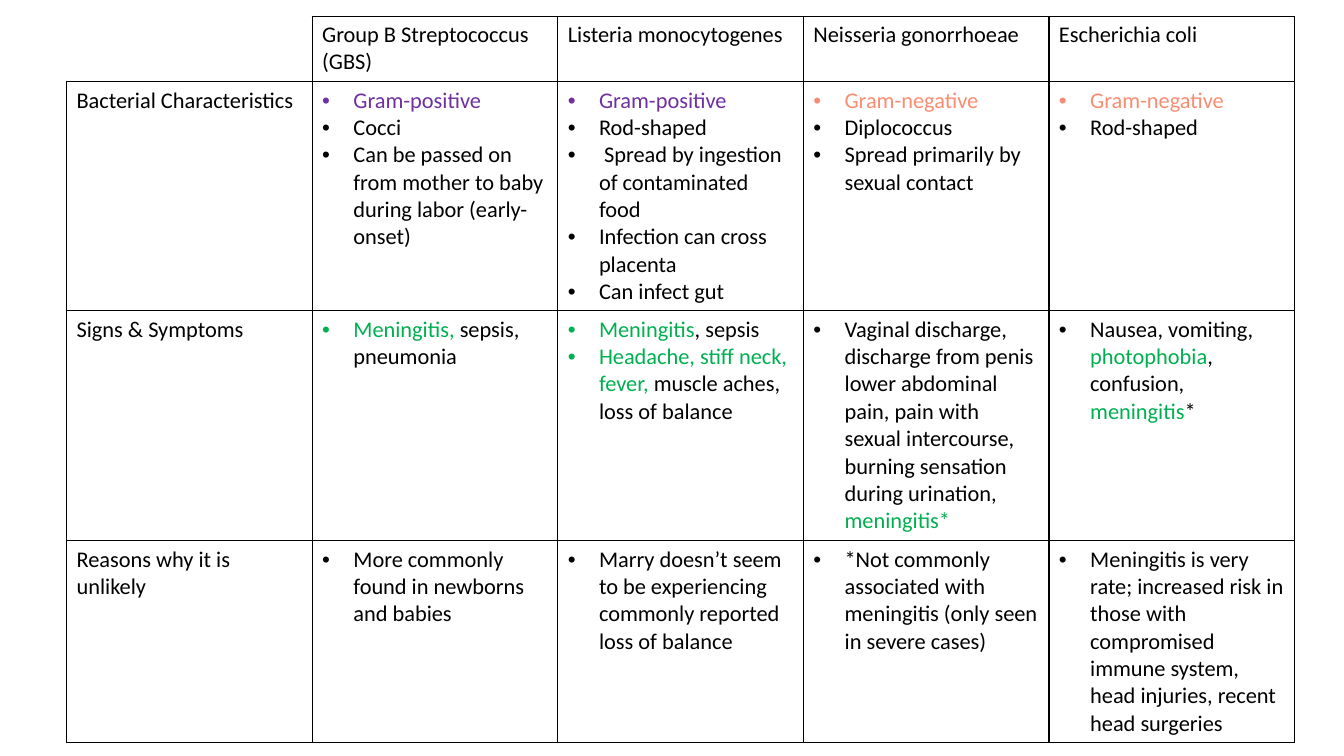
from lxml.etree import SubElement
from pptx import Presentation
from pptx.dml.color import RGBColor
from pptx.oxml.ns import qn
from pptx.util import Inches, Pt

BLACK = RGBColor(0x00, 0x00, 0x00)
PURPLE = RGBColor(0x70, 0x30, 0xA0)
CORAL = RGBColor(0xF9, 0x8D, 0x73)
GREEN = RGBColor(0x00, 0xB0, 0x50)

BACTERIA = ["Group B Streptococcus (GBS)", "Listeria monocytogenes",
            "Neisseria gonorrhoeae", "Escherichia coli"]
POSITIVE = [("Gram-positive", PURPLE)]
NEGATIVE = [("Gram-negative", CORAL)]

TOPICS = [
    ("Bacterial Characteristics", [
        [POSITIVE, "Cocci",
         "Can be passed on from mother to baby during labor (early-onset)"],
        [POSITIVE, "Rod-shaped", " Spread by ingestion of contaminated food",
         "Infection can cross placenta", "Can infect gut"],
        [NEGATIVE, "Diplococcus", "Spread primarily by sexual contact"],
        [NEGATIVE, "Rod-shaped"],
    ]),
    ("Signs & Symptoms", [
        [[("Meningitis, ", GREEN), ("sepsis, pneumonia", BLACK)]],
        [[("Meningitis", GREEN), (", sepsis", BLACK)],
         [("Headache, stiff neck, fever,", GREEN),
          (" muscle aches, loss of balance", BLACK)]],
        [[("Vaginal discharge, discharge from penis  lower abdominal pain, "
           "pain with sexual intercourse, burning sensation during urination, ", BLACK),
          ("meningitis*", GREEN)]],
        [[("Nausea, vomiting, ", BLACK), ("photophobia", GREEN),
          (", confusion, ", BLACK), ("meningitis", GREEN), ("*", BLACK)]],
    ]),
    ("Reasons why it is unlikely", [
        ["More commonly found in newborns and babies"],
        ["Marry doesn’t seem to be experiencing commonly reported loss of balance"],
        ["*Not commonly associated with meningitis (only seen in severe cases)"],
        ["Meningitis is very rate; increased risk in those with compromised "
         "immune system, head injuries, recent head surgeries"],
    ]),
]

LEFT, TOP, WIDTH = 0.66, 0.16, 12.18
ROW_HEIGHTS = [0.65, 2.27, 2.28, 1.99]
INDENT = 0.31
FONT = {"name": "Calibri", "size": Pt(16), "bold": False}
TABLE_FLAGS = {"first_row": False, "horz_banding": False}


def set_borders(cell, hidden=()):
    properties = cell._tc.get_or_add_tcPr()
    for side in ("lnL", "lnR", "lnT", "lnB"):
        line = SubElement(properties, qn(f"a:{side}"), w=str(Pt(1)))
        if side in hidden:
            SubElement(line, qn("a:noFill"))
        else:
            fill = SubElement(line, qn("a:solidFill"))
            SubElement(fill, qn("a:srgbClr"), val=str(BLACK))


def add_bullet(paragraph):
    properties = paragraph._p.get_or_add_pPr()
    properties.set("marL", str(Inches(INDENT)))
    properties.set("indent", str(-Inches(INDENT)))
    SubElement(properties, qn("a:buFont"), typeface="Arial")
    SubElement(properties, qn("a:buChar"), char="•")


def write_cell(cell, items, bulleted):
    frame = cell.text_frame
    for index, item in enumerate(items):
        paragraph = frame.add_paragraph() if index else frame.paragraphs[0]
        if bulleted:
            add_bullet(paragraph)
        for text, color in [(item, BLACK)] if isinstance(item, str) else item:
            run = paragraph.add_run()
            run.text = text
            for name, value in FONT.items():
                setattr(run.font, name, value)
            run.font.color.rgb = color


def main():
    presentation = Presentation()
    presentation.slide_width = Inches(13.33)
    presentation.slide_height = Inches(7.5)
    slide = presentation.slides.add_slide(presentation.slide_layouts[6])

    rows = [[[]] + [[name] for name in BACTERIA]]
    rows += [[[topic]] + cells for topic, cells in TOPICS]
    table = slide.shapes.add_table(
        len(rows), len(rows[0]), Inches(LEFT), Inches(TOP),
        Inches(WIDTH), Inches(sum(ROW_HEIGHTS))).table
    for name, value in TABLE_FLAGS.items():
        setattr(table, name, value)
    for row, height in zip(table.rows, ROW_HEIGHTS):
        row.height = Inches(height)

    for row_index, row in enumerate(rows):
        for column_index, items in enumerate(row):
            cell = table.cell(row_index, column_index)
            is_corner = row_index == column_index == 0
            set_borders(cell, ("lnL", "lnT") if is_corner else ())
            cell.fill.background()
            write_cell(cell, items, row_index > 0 and column_index > 0)

    presentation.save("out.pptx")


if __name__ == "__main__":
    main()
